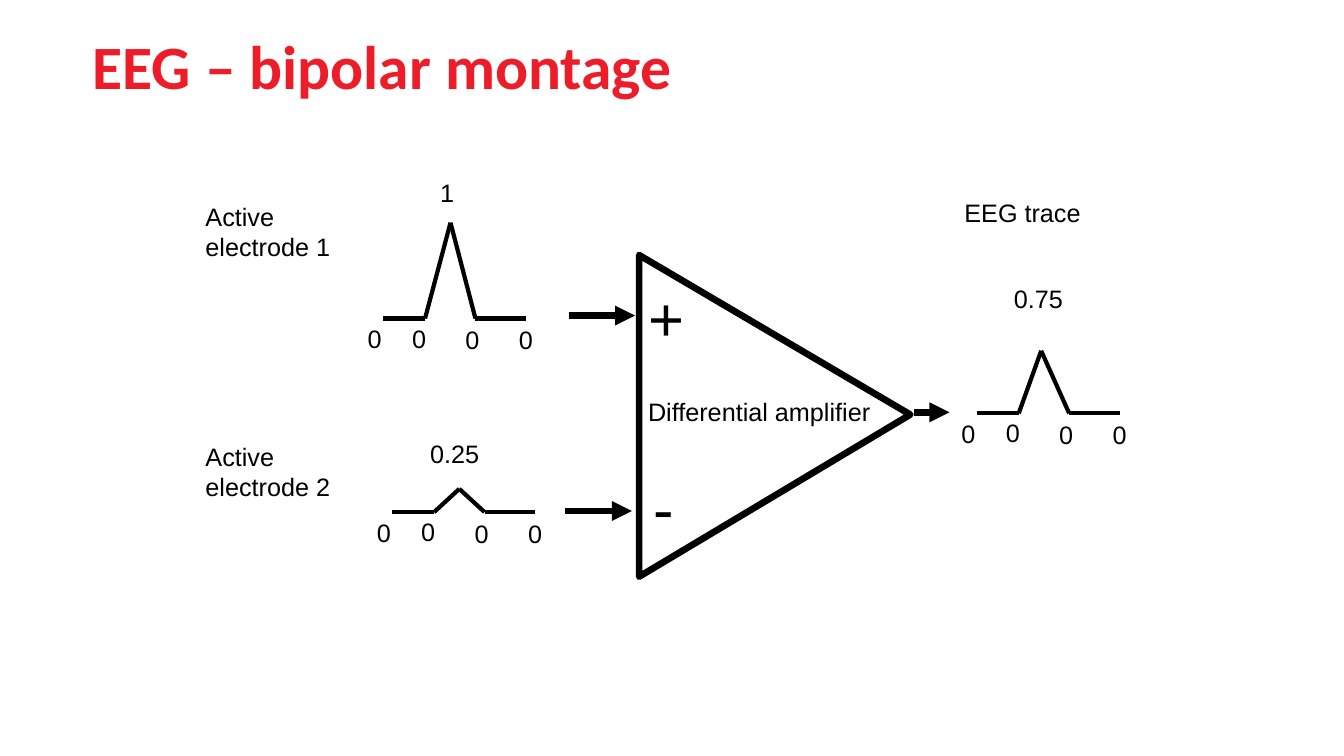
from dataclasses import dataclass
from itertools import pairwise

from lxml.etree import SubElement
from pptx import Presentation
from pptx.dml.color import RGBColor as Rgb
from pptx.enum.shapes import MSO_CONNECTOR as Conn, MSO_SHAPE as Form
from pptx.enum.text import MSO_ANCHOR as Anchor, MSO_AUTO_SIZE as Auto, PP_ALIGN as Align
from pptx.oxml.ns import qn
from pptx.util import Pt


@dataclass(frozen=True)
class Theme:
    ink: Rgb = Rgb(0, 0, 0)
    red: Rgb = Rgb(0xED, 0x1C, 0x29)
    body: str = "Arial"
    head: str = "Calibri"
    small: float = 18
    large: float = 44
    thin: float = 3
    thick: float = 4.75


@dataclass(frozen=True)
class Wave:
    left: float
    base: float
    tip: float      # offset of the peak from the left end
    rise: float
    value: str
    tag: tuple[float, float, float]  # left, top and width of the peak value


@dataclass(frozen=True)
class Label:
    text: str
    box: tuple[float, float, float, float]
    size: float = Theme.small
    wrap: bool = True


@dataclass(frozen=True)
class Arrow:
    left: float
    y: float
    length: float


THEME = Theme()
ROW = 29  # height of one line of small text
ZEROS = ((-18, 0), (13.7, -0.4), (51.8, 0.7), (90, 0.7))

WAVES = (
    Wave(273.6, 227.5, 48.2, 68.4, "1", (307.4, 123.1, 24.5)),
    Wave(697.7, 295.2, 46, 44.6, "0.75", (717.1, 198.7, 49.7)),
    Wave(280.1, 365.8, 48, 16.6, "0.25", (300.2, 309.6, 49.7)),
)
ARROWS = (
    Arrow(406.1, 225.4, 47.5),
    Arrow(403.9, 365, 47.5),
    Arrow(653, 294.5, 25.2),
)
LABELS = (
    Label("+", (455.8, 196.6, 40.3, 60.5), THEME.large, False),
    Label("-", (459.4, 331.9, 29.5, 60.5), THEME.large, False),
    Label("Active electrode 1", (139.7, 140.4, 128.9, 51)),
    Label("Active electrode 2", (139.7, 311.8, 128.9, 51)),
    Label("EEG trace", (681.8, 137.5, 173.5, ROW)),
    Label("Differential amplifier", (455.8, 279.4, 173.5, ROW)),
)


def write(shape, text: str, *, size: float = THEME.small, font: str = THEME.body,
          color: Rgb = THEME.ink, bold: bool = False, wrap: bool = True) -> None:
    frame = shape.text_frame
    frame.text = text
    frame.word_wrap = wrap
    frame.auto_size = Auto.NONE
    frame.vertical_anchor = Anchor.TOP
    para = frame.paragraphs[0]
    para.alignment = Align.LEFT
    para.line_spacing = 1.0
    para.space_before = Pt(0)
    face = para.runs[0].font
    face.name, face.size, face.bold = font, Pt(size), bold
    face.color.rgb = color


def place(shapes, label: Label) -> None:
    box = shapes.add_textbox(*map(Pt, label.box))
    write(box, label.text, size=label.size, wrap=label.wrap)


def stroke(shapes, start: tuple[float, float], end: tuple[float, float],
           width: float, head: bool = False) -> None:
    line = shapes.add_connector(Conn.STRAIGHT, *map(Pt, (*start, *end)))
    line.line.color.rgb = THEME.ink
    line.line.width = Pt(width)
    if head:
        SubElement(line.line._get_or_add_ln(), qn("a:tailEnd"), type="triangle")
    SubElement(line._element.spPr, qn("a:effectLst"))


def trace(shapes, wave: Wave) -> None:
    group = shapes.add_group_shape().shapes
    curve = ((0, 0), (30, 0), (wave.tip, wave.rise), (66, 0), (102, 0))
    dots = [(wave.left + dx, wave.base - dy) for dx, dy in curve]
    for start, end in pairwise(dots):
        stroke(group, start, end, THEME.thin)
    place(group, Label(wave.value, (*wave.tag, ROW), wrap=False))
    for dx, dy in ZEROS:
        box = (wave.left + dx, wave.base + dy, 24.5, ROW)
        place(group, Label("0", box, wrap=False))


def amplify(shapes) -> None:
    body = shapes.add_shape(Form.ISOSCELES_TRIANGLE, *map(Pt, (438.5, 200.2, 229.7, 193.7)))
    body.adjustments[0] = 0.496
    body.rotation = 90
    body.shadow.inherit = False
    body.fill.background()
    body.line.color.rgb = THEME.ink
    body.line.width = Pt(THEME.thick)
    SubElement(body.line._get_or_add_ln(), qn("a:round"))


def main() -> None:
    deck = Presentation()
    deck.slide_width, deck.slide_height = Pt(960), Pt(540)
    slide = deck.slides.add_slide(deck.slide_layouts[5])
    shapes = slide.shapes

    # Title
    title = shapes.title
    title.left, title.top, title.width, title.height = map(Pt, (59, 16.6, 670.3, 60.5))
    write(title, "EEG – bipolar montage", size=THEME.large, font=THEME.head,
          color=THEME.red, bold=True)

    # Amplifier with its inputs and output
    amplify(shapes)
    for arrow in ARROWS:
        stroke(shapes, (arrow.left, arrow.y), (arrow.left + arrow.length, arrow.y),
               THEME.thick, head=True)

    # Signals and captions
    for wave in WAVES:
        trace(shapes, wave)
    for label in LABELS:
        place(shapes, label)

    deck.save("out.pptx")


if __name__ == "__main__":
    main()
